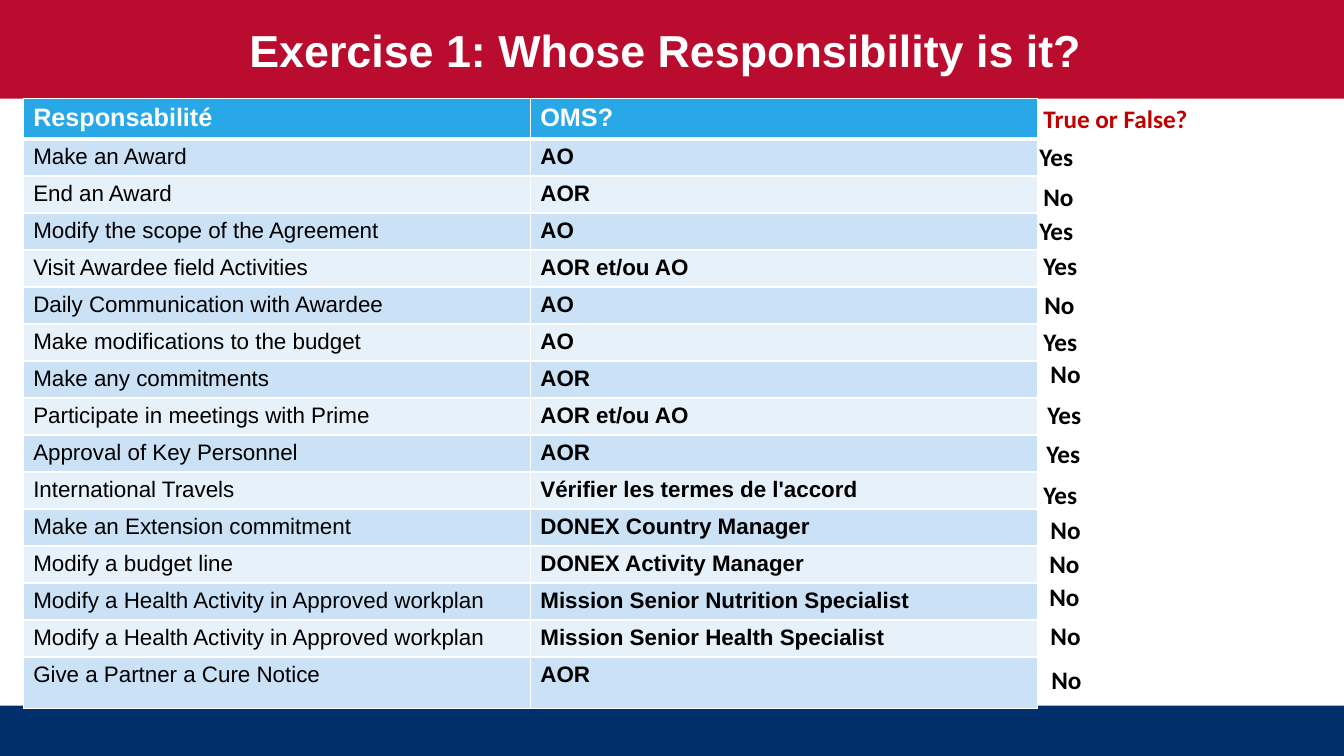
"""Build the 'Whose Responsibility is it?' exercise slide."""
from pptx import Presentation
from pptx.dml.color import RGBColor as RGB
from pptx.enum.shapes import MSO_SHAPE as SHAPE
from pptx.enum.text import MSO_ANCHOR as ANCHOR, MSO_AUTO_SIZE as FIT, PP_ALIGN as ALIGN
from pptx.oxml.ns import qn
from pptx.util import Inches, Pt
from lxml.etree import SubElement

TITLE = "Exercise 1: Whose Responsibility is it? "
HEADER = ("Responsabilité", "OMS?")
ANSWER_HEAD = ("True or False?", 10.25, 0.98)
ROWS = [
    ("Make an Award", "AO", ("Yes", 10.21, 1.35)),
    ("End an Award", "AOR", ("No", 10.25, 1.75)),
    ("Modify the scope of the Agreement", "AO", ("Yes", 10.21, 2.09)),
    ("Visit Awardee field Activities", "AOR et/ou AO", ("Yes", 10.25, 2.43)),
    ("Daily Communication with Awardee", "AO", ("No", 10.26, 2.82)),
    ("Make modifications to the budget", "AO", ("Yes", 10.25, 3.19)),
    ("Make any commitments", "AOR", ("No", 10.32, 3.51)),
    ("Participate in meetings with Prime", "AOR et/ou AO", ("Yes", 10.29, 3.91)),
    ("Approval of Key Personnel", "AOR", ("Yes", 10.28, 4.3)),
    ("International Travels", "Vérifier les termes de l'accord", ("Yes", 10.25, 4.71)),
    ("Make an Extension commitment", "DONEX Country Manager", ("No", 10.32, 5.05)),
    ("Modify a budget line", "DONEX Activity Manager", ("No", 10.31, 5.39)),
    ("Modify a Health Activity in Approved workplan",
     "Mission Senior Nutrition Specialist", ("No", 10.31, 5.72)),
    ("Modify a Health Activity in Approved workplan",
     "Mission Senior Health Specialist", ("No", 10.32, 6.1)),
    ("Give a Partner a Cure Notice", "AOR", ("No", 10.33, 6.54)),
]

THEME = {
    "red": "BA0C2F", "navy": "002F6C", "head": "29A8E7", "bands": ("CBE1F6", "E7F1FA"),
    "rule": "FFFFFF",
    "title": {"name": "Arial", "size": Pt(32), "bold": True, "color": "FFFFFF"},
    "header": {"name": "Arial", "size": Pt(18), "bold": True, "color": "FFFFFF"},
    "task": {"name": "Arial", "size": Pt(16), "bold": False, "color": "000000"},
    "owner": {"name": "Arial", "size": Pt(16), "bold": True, "color": "000000"},
    "answer": {"name": "Calibri", "size": Pt(18), "bold": True, "color": "000000"},
    "answer_head": {"name": "Calibri", "size": Pt(18), "bold": True, "color": "C00000"},
}
WIDTH, HEIGHT = 13.33, 7.5
BANNER_H, FOOTER_H = 0.98, 0.5
TABLE_X, COL_W = 0.23, 5.03
HEAD_H, BODY_H, LAST_H = 0.4, 5.14, 0.51


def box(x, y, w, h):
    return [Inches(v) for v in (x, y, w, h)]


def paint(shape, color):
    shape.fill.solid()
    shape.fill.fore_color.rgb = RGB.from_string(color)


def write(tf, text, style):
    p = tf.paragraphs[0]
    r = p.add_run()
    r.text = text
    for key, value in style.items():
        if key == "color":
            r.font.color.rgb = RGB.from_string(value)
        else:
            setattr(r.font, key, value)
    return p


def border(cell, bottom):
    tc_pr = cell._tc.get_or_add_tcPr()
    for i, (side, width) in enumerate((("L", 1), ("R", 1), ("T", 1), ("B", bottom))):
        ln = tc_pr.makeelement(qn(f"a:ln{side}"), {"w": str(Pt(width))})
        fill = SubElement(ln, qn("a:solidFill"))
        SubElement(fill, qn("a:srgbClr"), val=THEME["rule"])
        tc_pr.insert(i, ln)


def add_title(s):
    title = s.shapes.title
    title.left, title.top, title.width, title.height = box(0, 0, WIDTH, BANNER_H)
    paint(title, THEME["red"])
    tf = title.text_frame
    tf.auto_size, tf.vertical_anchor = FIT.NONE, ANCHOR.MIDDLE
    write(tf, TITLE, THEME["title"]).alignment = ALIGN.CENTER


def add_footer(s):
    bar = s.shapes.add_shape(SHAPE.RECTANGLE, *box(0, HEIGHT - FOOTER_H, WIDTH, FOOTER_H))
    bar.shadow.inherit = False
    paint(bar, THEME["navy"])
    bar.line.fill.background()


def add_duties(s):
    lines = [HEADER] + [row[:2] for row in ROWS]
    body = len(ROWS) - 1
    heights = [HEAD_H] + [BODY_H / body] * body + [LAST_H]
    frame = box(TABLE_X, BANNER_H, 2 * COL_W, sum(heights))
    table = s.shapes.add_table(len(lines), 2, *frame).table
    for col in table.columns:
        col.width = Inches(COL_W)
    for i, (line, height) in enumerate(zip(lines, heights)):
        table.rows[i].height = Inches(height)
        for j, text in enumerate(line):
            cell = table.cell(i, j)
            paint(cell, THEME["bands"][(i - 1) % 2] if i else THEME["head"])
            border(cell, 1 if i else 3)
            write(cell.text_frame, text, THEME[("task", "owner")[j] if i else "header"])


def add_answer(s, answer, width, style):
    text, x, y = answer
    tf = s.shapes.add_textbox(*box(x, y, width, 0.4)).text_frame
    tf.word_wrap, tf.auto_size = True, FIT.SHAPE_TO_FIT_TEXT
    write(tf, text, style)


def main():
    prs = Presentation()
    prs.slide_width, prs.slide_height = Inches(WIDTH), Inches(HEIGHT)
    s = prs.slides.add_slide(prs.slide_layouts[5])
    add_title(s)
    add_footer(s)
    add_duties(s)
    add_answer(s, ANSWER_HEAD, 2.09, THEME["answer_head"])
    for _, _, answer in ROWS:
        add_answer(s, answer, 0.8, THEME["answer"])
    prs.save("out.pptx")


if __name__ == "__main__":
    main()
